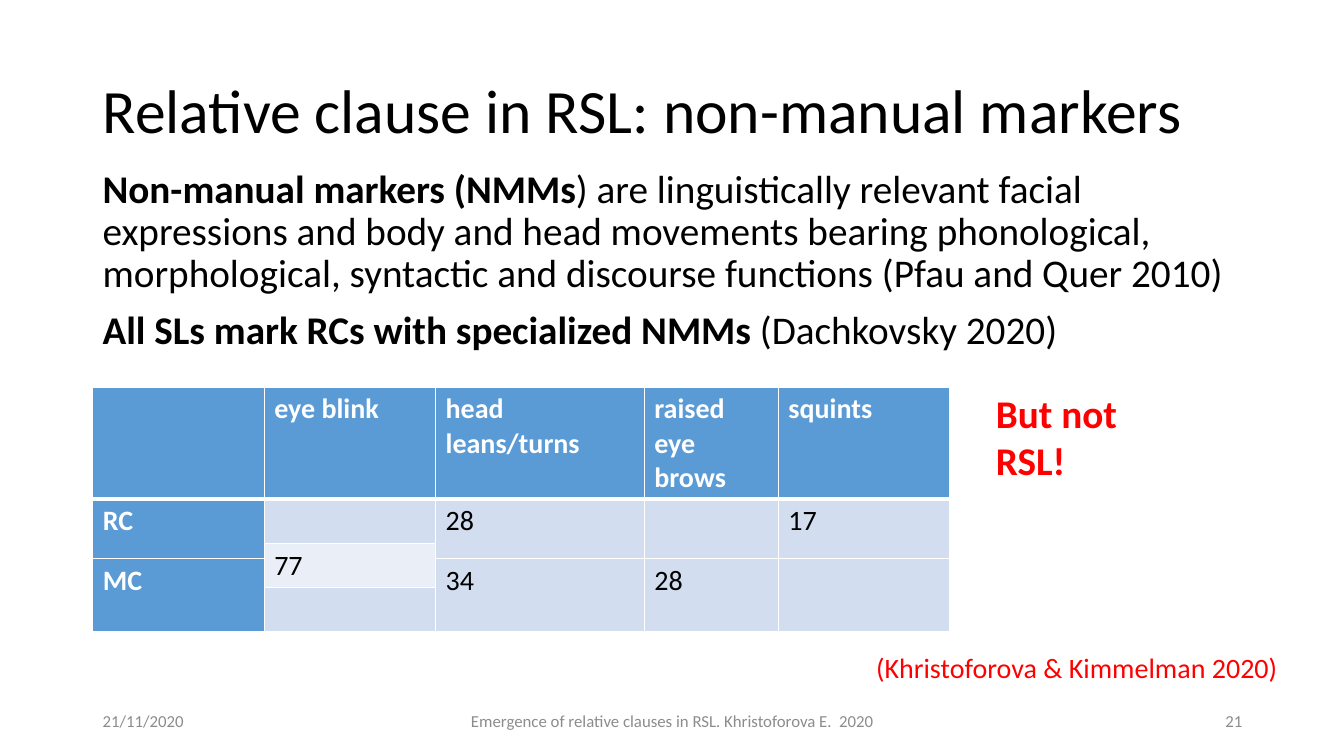
from itertools import product
from lxml.etree import SubElement
from pptx import Presentation
from pptx.dml.color import RGBColor
from pptx.enum.text import MSO_ANCHOR, PP_ALIGN
from pptx.oxml.ns import qn
from pptx.util import Pt

PX = 9144
HEADER, BAND, LIGHT_BAND = "5B9BD5", "D2DEEF", "EAEFF7"
WHITE, BLACK, RED, GREY = "FFFFFF", "000000", "FF0000", "8C8C8C"
COLUMN_WIDTHS = [170, 170, 207, 133, 170]
ROW_HEIGHTS = [111, 44, 15, 29, 44]
MARKERS = ["", "eye blink", "head leans/turns", "raised eye brows", "squints"]
CLAUSE_COUNTS = [("RC", "28", "", "17"), ("MC", "34", "28", "")]
BLINK_COUNTS = [(1, 1, "", BAND), (2, 2, "77", LIGHT_BAND), (4, 1, "", BAND)]


def px(length):
    return length * PX


def color(code):
    return RGBColor.from_string(code)


def write(frame, paragraphs, size, ink=BLACK, align=PP_ALIGN.LEFT,
          anchor=MSO_ANCHOR.TOP, spacing=None, before=0):
    frame.word_wrap = True
    frame.vertical_anchor = anchor
    for index, passages in enumerate(paragraphs):
        paragraph = frame.add_paragraph() if index else frame.paragraphs[0]
        paragraph.alignment = align
        paragraph.space_before = Pt(before)
        if spacing:
            paragraph.line_spacing = spacing
        for wording, bold in passages:
            run = paragraph.add_run()
            run.text = wording
            run.font.name = "Calibri"
            run.font.size = Pt(size)
            run.font.bold = bold
            run.font.color.rgb = color(ink)


def add_text(slide, box, paragraphs, size, **style):
    frame = slide.shapes.add_textbox(*map(px, box)).text_frame
    write(frame, paragraphs, size, **style)


def add_title(slide, box):
    add_text(slide, box, [[("Relative clause in RSL: non-manual markers", False)]],
             44, anchor=MSO_ANCHOR.MIDDLE, spacing=0.9)


def add_definitions(slide, box):
    add_text(slide, box, [
        [("Non-manual markers (NMMs", True),
         (") are linguistically relevant facial expressions and body and head "
          "movements bearing phonological, morphological, syntactic and "
          "discourse functions (Pfau and Quer 2010)", False)],
        [("All SLs mark RCs with specialized NMMs ", True),
         ("(Dachkovsky 2020)", False)],
    ], 28, spacing=0.9, before=10)


def add_borders(cell, row):
    properties = cell._tc.get_or_add_tcPr()
    widths = {"lnL": 1, "lnR": 1, "lnT": 3 if row == 1 else 1,
              "lnB": 3 if row == 0 else 1}
    for side, width in widths.items():
        line = SubElement(properties, qn(f"a:{side}"), w=str(Pt(width)))
        fill = SubElement(line, qn("a:solidFill"))
        SubElement(fill, qn("a:srgbClr"), val=WHITE)


def fill_cell(table, row, column, span, wording, fill):
    cell = table.cell(row, column)
    if span > 1:
        cell.merge(table.cell(row + span - 1, column))
    for offset in range(span):
        part = table.cell(row + offset, column)
        part.fill.solid()
        part.fill.fore_color.rgb = color(fill)
    heading = fill == HEADER
    anchor = MSO_ANCHOR.MIDDLE if fill == LIGHT_BAND else MSO_ANCHOR.TOP
    write(cell.text_frame, [[(wording, heading)]], 20,
          ink=WHITE if heading else BLACK, anchor=anchor)


def add_marker_table(slide, left, top):
    table = slide.shapes.add_table(
        len(ROW_HEIGHTS), len(COLUMN_WIDTHS), px(left), px(top),
        px(sum(COLUMN_WIDTHS)), px(sum(ROW_HEIGHTS))).table
    table.horz_banding = False
    for column, width in zip(table.columns, COLUMN_WIDTHS):
        column.width = px(width)
    for row, height in zip(table.rows, ROW_HEIGHTS):
        row.height = px(height)
    for row, column in product(range(len(ROW_HEIGHTS)), range(len(COLUMN_WIDTHS))):
        add_borders(table.cell(row, column), row)
    for column, marker in enumerate(MARKERS):
        fill_cell(table, 0, column, 1, marker, HEADER)
    for row, counts in zip((1, 3), CLAUSE_COUNTS):
        for column, count in zip((0, 2, 3, 4), counts):
            fill_cell(table, row, column, 2, count, BAND if column else HEADER)
    for row, span, count, fill in BLINK_COUNTS:
        fill_cell(table, row, 1, span, count, fill)


def add_remark(slide, box):
    add_text(slide, box, [[("But not RSL!", True)]], 28, ink=RED)


def add_citation(slide, box):
    add_text(slide, box, [[("(Khristoforova & Kimmelman 2020)", False)]], 20, ink=RED)


def add_footer(slide, left, top, width, height):
    side, middle = 300, 450
    parts = [
        (left, side, "21/11/2020", PP_ALIGN.LEFT),
        (left + (width - middle) // 2, middle,
         "Emergence of relative clauses in RSL. Khristoforova E.  2020", PP_ALIGN.CENTER),
        (left + width - side, side, "21", PP_ALIGN.RIGHT),
    ]
    for start, extent, wording, align in parts:
        add_text(slide, (start, top, extent, height), [[(wording, False)]], 12,
                 ink=GREY, align=align, anchor=MSO_ANCHOR.MIDDLE)


def main():
    deck = Presentation()
    deck.slide_width, deck.slide_height = px(1333), px(750)
    slide = deck.slides.add_slide(deck.slide_layouts[6])
    add_title(slide, (92, 40, 1150, 145))
    add_definitions(slide, (92, 163, 1150, 476))
    add_footer(slide, 92, 695, 1150, 40)
    add_marker_table(slide, 92, 384)
    add_remark(slide, (978, 381, 210, 104))
    add_citation(slide, (859, 640, 425, 44))
    deck.save("out.pptx")


if __name__ == "__main__":
    main()
